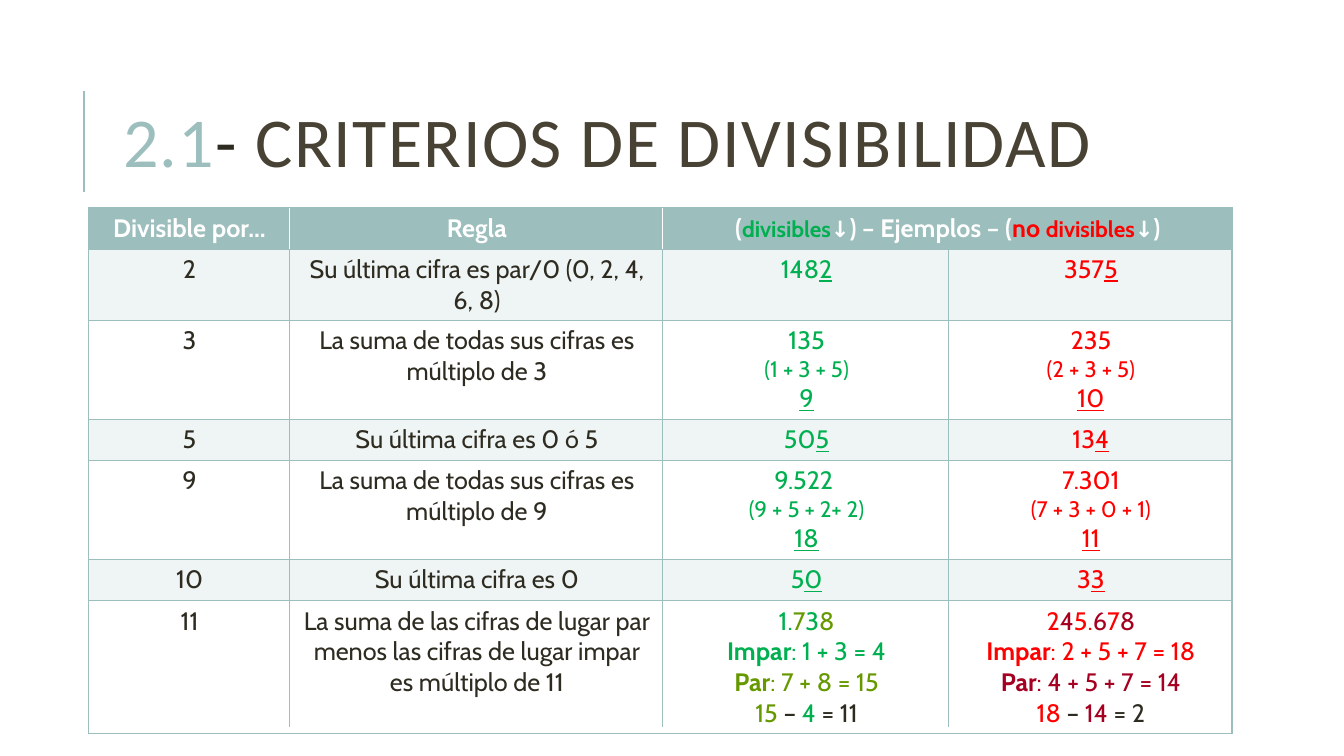
import pptx
import pptx.util
import pptx.dml.color
import pptx.enum.text
import pptx.enum.shapes
import pptx.oxml
import pptx.oxml.ns
import lxml.etree

Inches = pptx.util.Inches
TEAL, PALE, WHITE, DARK = "9CBEBD", "EFF4F4", "FFFFFF", "2E2B21"
GREEN, OLIVE, RED, WINE = "00B050", "669900", "FF0000", "A50021"


def tint(text):
    return pptx.dml.color.RGBColor.from_string(text)


def write(para, runs, base):
    for text, color, extra in runs:
        run = para.add_run()
        run.text = text
        for name, value in {**base, **extra}.items():
            setattr(run.font, name, value)
        run.font.color.rgb = tint(color)


deck = pptx.Presentation()
deck.slide_width, deck.slide_height = Inches(13.33), Inches(7.5)
slide = deck.slides.add_slide(deck.slide_layouts[5])

title = slide.shapes.title
title.left, title.top = Inches(1.12), Inches(0.64)
title.width, title.height = Inches(10.63), Inches(1.64)
frame = title.text_frame
form = {
    "word_wrap": True,
    "auto_size": pptx.enum.text.MSO_AUTO_SIZE.NONE,
    "vertical_anchor": pptx.enum.text.MSO_ANCHOR.MIDDLE,
}
for name, value in form.items():
    setattr(frame, name, value)
head = frame.paragraphs[0]
head.alignment = pptx.enum.text.PP_ALIGN.LEFT
head.line_spacing = 0.8
write(
    head,
    [("2.1", TEAL, {}), ("-", DARK, {}), (" CRITERIOS DE DIVISIBILIDAD", "474233", {})],
    {"name": "Calibri", "size": pptx.util.Pt(50)},
)
for run in head.runs:
    run.font._element.set("spc", "100")

small = {"size": pptx.util.Pt(16)}
under = {"underline": True}
bold = {"bold": True}


def plain(text, color=DARK):
    return [[(text, color, {})]]


def digit(start, last, color):
    return [[(start, color, {}), (last, color, under)]]


def total(number, steps, result, color):
    return [[(number, color, {})], [(steps, color, small)], [(result, color, under)]]


def parity(digits, odd, even, parts, main, other):
    first, second, result = parts
    return [
        [(text, (main, other)[i % 2], {}) for i, text in enumerate(digits)],
        [("Impar", main, bold), (odd, main, {})],
        [("Par", other, bold), (even, other, {})],
        [first, ("– ", DARK, {}), second, (result, DARK, {})],
    ]


label = [[
    ("(", WHITE, {}), ("divisibles", GREEN, small), ("↓", WHITE, small),
    (") – Ejemplos – (", WHITE, {}), ("no ", RED, {}),
    ("divisibles", RED, small), ("↓", WHITE, small), (")", WHITE, {}),
]]
good = parity(["1.", "7", "3", "8"], ": 1 + 3 = 4", ": 7 + 8 = 15",
              [("15 ", OLIVE, {}), ("4 ", GREEN, {}), "= 11"], GREEN, OLIVE)
bad = parity(["2", "4", "5.", "6", "7", "8"], ": 2 + 5 + 7 = 18", ": 4 + 5 + 7 = 14",
             [("18 ", RED, {}), ("14 ", WINE, {}), "= 2"], RED, WINE)
rows = [
    [plain("Divisible por...", WHITE), plain("Regla", WHITE), label, []],
    [plain("2"), plain("Su última cifra es par/0 (0, 2, 4, 6, 8)"),
     digit("148", "2", GREEN), digit("357", "5", RED)],
    [plain("3"), plain("La suma de todas sus cifras es múltiplo de 3"),
     total("135", "(1 + 3 + 5)", "9", GREEN), total("235", "(2 + 3 + 5)", "10", RED)],
    [plain("5"), plain("Su última cifra es 0 ó 5"),
     digit("50", "5", GREEN), digit("13", "4", RED)],
    [plain("9"), plain("La suma de todas sus cifras es múltiplo de 9"),
     total("9.522 ", "(9 + 5 + 2+ 2)", "18", GREEN),
     total("7.301", "(7 + 3 + 0 + 1)", "11", RED)],
    [plain("10"), plain("Su última cifra es 0"),
     digit("5", "0", GREEN), digit("3", "3", RED)],
    [plain("11"),
     plain("La suma de las cifras de lugar par menos las cifras de lugar impar es múltiplo de 11"),
     good, bad],
]

widths = [2, 3.7, 2.84, 2.8]
grid = slide.shapes.add_table(
    len(rows), 4, Inches(0.88), Inches(2.06), Inches(11.34), Inches(2.87)
).table
for col, width in zip(grid.columns, widths):
    col.width = Inches(width)
for row in grid.rows:
    row.height = Inches(0.41)
grid.cell(0, 2).merge(grid.cell(0, 3))

space = pptx.oxml.ns.nsdecls("a")
for r, row in enumerate(rows):
    for c, paras in enumerate(row):
        cell = grid.cell(r, c)
        props = cell._tc.get_or_add_tcPr()
        for side in "LRTB":
            drawn = side in "TB" or (side, c) in (("L", 0), ("R", 3))
            if r == 0 and c == 2 and side == "R":
                drawn = True
            ink = f'<a:solidFill><a:srgbClr val="{TEAL}"/></a:solidFill>' if drawn else "<a:noFill/>"
            props.append(pptx.oxml.parse_xml(f'<a:ln{side} {space} w="12700">{ink}</a:ln{side}>'))
        cell.fill.solid()
        cell.fill.fore_color.rgb = tint(TEAL if r == 0 else PALE if r % 2 else WHITE)
        base = {"name": "Cabin", "size": pptx.util.Pt(18), "bold": r == 0, "underline": False}
        for i, runs in enumerate(paras):
            para = cell.text_frame.paragraphs[0] if i == 0 else cell.text_frame.add_paragraph()
            para.alignment = pptx.enum.text.PP_ALIGN.CENTER
            write(para, runs, base)

rules = [(0.83, 1.9, 0.9, TEAL, 1.5)]
rules += [(x, 2.06, 2.47, WHITE, 1) for x in (2.87, 6.57)]
rules += [(x, 2.47, 7.21, TEAL, 1) for x in (2.87, 6.57, 9.41)]
for x, start, end, color, weight in rules:
    rule = slide.shapes.add_connector(
        pptx.enum.shapes.MSO_CONNECTOR.STRAIGHT, Inches(x), Inches(start), Inches(x), Inches(end)
    )
    rule.line.color.rgb = tint(color)
    rule.line.width = pptx.util.Pt(weight)
    lxml.etree.SubElement(rule._element.spPr, pptx.oxml.ns.qn("a:effectLst"))

deck.save("out.pptx")
